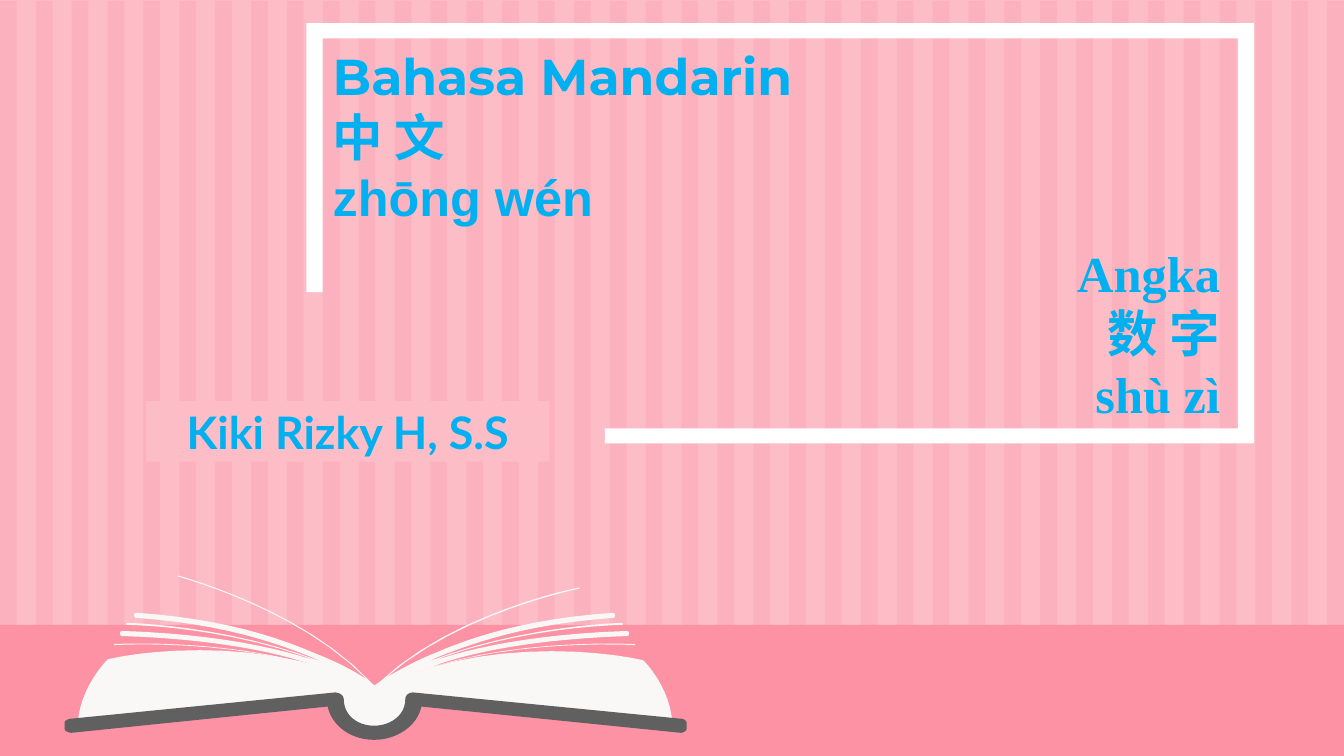
from lxml.etree import SubElement
from pptx import Presentation
from pptx.dml.color import RGBColor
from pptx.enum.shapes import MSO_SHAPE
from pptx.enum.text import MSO_ANCHOR, MSO_AUTO_SIZE, PP_ALIGN
from pptx.oxml.ns import qn
from pptx.util import Inches, Pt

BLUSH = RGBColor(0xFD, 0xBD, 0xC7)
ROSE = RGBColor(0xFC, 0x92, 0xA3)
SKY = RGBColor(0x00, 0xB0, 0xF0)
NAVY = RGBColor(0x00, 0x20, 0x60)
WHITE = RGBColor(0xFF, 0xFF, 0xFF)
BLACK = RGBColor(0x00, 0x00, 0x00)
PAPER = RGBColor(0xF9, 0xF8, 0xF7)
COVER = RGBColor(0x60, 0x60, 0x60)

# The slide is a grid of square cells, a hundredth of an inch each.
COLUMNS, ROWS = 1333, 750
CELL = Inches(0.01)
CURVE_STEPS = 12
HAN_FONT = "Noto Sans CJK SC"

# Outlines: a pair is a corner, six numbers are a Bezier curve.
FRAME = [(304, 23), (1244, 23), (1244, 440), (600, 440), (600, 425),
         (1228, 425), (1228, 38), (320, 38), (320, 290), (304, 290)]
PAGES = [
    (638, 655), (590, 644, 468, 634, 373, 684), (373, 683),
    (277, 633, 154, 643, 107, 654), (107, 654, 79, 681, 77, 719),
    (334, 691), (334, 709, 351, 724, 372, 724), (372, 725),
    (393, 725, 411, 710, 411, 692), (667, 720),
    (666, 682, 638, 655, 638, 655)]
BINDING = [
    (371, 734), (348, 734, 329, 720, 325, 701), (71, 727),
    (68, 727, 64, 725, 64, 723), (64, 717), (64, 715, 68, 713, 71, 713),
    (332, 687), (337, 687, 341, 690, 341, 694),
    (341, 709, 354, 720, 371, 720), (388, 720, 402, 709, 402, 694),
    (402, 690, 405, 687, 410, 687), (675, 713),
    (678, 713, 681, 715, 681, 717), (681, 723),
    (681, 725, 678, 727, 675, 727), (418, 701),
    (414, 720, 394, 734, 371, 734)]
FAN_LEAVES = [
    (630, 639), (628, 639, 522, 633, 430, 661),
    (430, 661, 431, 660, 432, 660), (468, 647, 531, 634, 622, 631),
    (623, 631, 624, 630, 624, 628), (624, 627, 623, 626, 621, 626),
    (530, 629, 466, 643, 429, 656), (425, 657, 422, 659, 418, 660),
    (513, 621, 616, 620, 617, 620), (618, 619),
    (617, 618), (616, 618, 517, 620, 423, 657),
    (427, 655, 430, 654, 434, 652), (471, 637, 524, 619, 608, 613),
    (609, 613, 610, 612, 610, 610), (610, 609, 609, 608, 607, 608),
    (522, 614, 468, 632, 431, 648)]
FAN_SPINE = [
    (370, 681), (371, 683), (369, 684), (373, 688),
    (373, 687, 387, 678, 416, 666), (511, 633, 628, 640, 629, 640),
    (630, 640)]
RIGHT_TOP_LEAF = [
    (409, 657, 394, 666, 383, 672), (458, 607, 574, 584, 575, 584),
    (575, 583), (574, 583), (573, 583, 451, 607, 377, 676)]
LEFT_TOP_LEAF = [
    (405, 658, 388, 668, 378, 675), (448, 603, 565, 573, 566, 572),
    (567, 572), (566, 571), (564, 572, 442, 604, 374, 678)]
MIRROR_SUM = 743


def flatten(outline):
    """Turn corners and curves into a plain list of points."""
    points = []
    for step in outline:
        if len(step) == 2:
            points.append(step)
            continue
        controls = [points[-1], step[:2], step[2:4], step[4:]]
        for count in range(1, CURVE_STEPS + 1):
            t = count / CURVE_STEPS
            weights = ((1 - t) ** 3, 3 * t * (1 - t) ** 2,
                       3 * t * t * (1 - t), t ** 3)
            points.append(tuple(
                sum(w * control[axis] for w, control in zip(weights, controls))
                for axis in (0, 1)))
    return points


class LessonCover:
    """Draws styled elements on one slide, placed in grid cells."""

    def __init__(self, slide):
        self.slide = slide
        slide.background.fill.solid()
        slide.background.fill.fore_color.rgb = BLUSH

    def paint(self, shape, color, alpha=None):
        shape.shadow.inherit = False
        shape.fill.solid()
        shape.fill.fore_color.rgb = color
        shape.line.fill.background()
        if alpha is not None:
            srgb = shape.element.spPr.find(".//" + qn("a:srgbClr"))
            SubElement(srgb, qn("a:alpha"), val=str(alpha * 1000))
        return shape

    def outline(self, contours, color, alpha=None, group=None):
        """Fill one or more closed contours as a single shape."""
        builder = None
        for contour in contours:
            start, *rest = [(x * CELL, y * CELL) for x, y in contour]
            if builder is None:
                builder = (group or self.slide).shapes.build_freeform(*start)
            else:
                builder.move_to(*start)
            builder.add_line_segments(rest, close=True)
        return self.paint(builder.convert_to_shape(), color, alpha)

    def rectangle(self, cells, color):
        box = self.slide.shapes.add_shape(
            MSO_SHAPE.RECTANGLE, *(n * CELL for n in cells))
        return self.paint(box, color)

    def title(self, cells, lines, edge):
        heading = self.slide.shapes.title
        heading.left, heading.top, heading.width, heading.height = (
            n * CELL for n in cells)
        heading.element.getparent().append(heading.element)
        self.letter(heading, lines, edge, PP_ALIGN.LEFT)

    def text(self, cells, lines, edge, align):
        box = self.slide.shapes.add_textbox(*(n * CELL for n in cells))
        self.letter(box, lines, edge, align)

    def letter(self, shape, lines, edge, align, size=36, grow=True):
        """Set (wording, font) lines; edge is the letters' line colour and width."""
        frame = shape.text_frame
        frame.text = "\n".join(wording for wording, _ in lines)
        frame.word_wrap = True
        frame.vertical_anchor = MSO_ANCHOR.MIDDLE
        frame.auto_size = (MSO_AUTO_SIZE.SHAPE_TO_FIT_TEXT if grow
                           else MSO_AUTO_SIZE.NONE)
        edge_color, edge_width = edge
        for paragraph, (_, font_name) in zip(frame.paragraphs, lines):
            paragraph.alignment = align
            run = paragraph.runs[0]
            run.font.size, run.font.bold = Pt(size), True
            run.font.color.rgb = SKY
            run.font.name = font_name
            properties = run._r.get_or_add_rPr()
            SubElement(properties, qn("a:ea"), typeface=HAN_FONT)
            letter_line = SubElement(properties, qn("a:ln"), w=str(int(Pt(edge_width))))
            line_fill = SubElement(letter_line, qn("a:solidFill"))
            SubElement(line_fill, qn("a:srgbClr"), val=str(edge_color))
            properties.insert(0, letter_line)

    def wallpaper(self, count=38, stripe=16.6):
        pitch = (COLUMNS - stripe) / (count - 1)
        lefts = [number * pitch for number in range(count)]
        self.outline([[(x, 1), (x + stripe, 1), (x + stripe, ROWS), (x, ROWS)]
                      for x in lefts], ROSE, alpha=24)

    def book(self):
        group = self.slide.shapes.add_group_shape()
        right_fan = flatten(FAN_LEAVES + RIGHT_TOP_LEAF + FAN_SPINE)
        left_fan = [(MIRROR_SUM - x, y) for x, y in
                    flatten(FAN_LEAVES + LEFT_TOP_LEAF + FAN_SPINE)]
        for points, color in ((flatten(PAGES), PAPER), (flatten(BINDING), COVER),
                              (right_fan, PAPER), (left_fan, PAPER)):
            self.outline([points], color, group=group)


def main():
    deck = Presentation()
    deck.slide_width, deck.slide_height = COLUMNS * CELL, ROWS * CELL
    cover = LessonCover(deck.slides.add_slide(deck.slide_layouts[5]))
    cover.wallpaper()
    cover.rectangle((0, 620, COLUMNS, 130), ROSE)
    cover.title((320, 39, 829, 192),
                [("Bahasa Mandarin", "Montserrat"), ("中 文", HAN_FONT),
                 ("zhōng wén", "Arial")], (WHITE, 1.4))
    cover.text((553, 234, 667, 192),
               [(wording, "Times New Roman")
                for wording in ("Angka", "数 字", "shù zì")],
               (NAVY, 0.75), PP_ALIGN.RIGHT)
    cover.outline([FRAME], WHITE)
    cover.book()
    author = cover.rectangle((145, 398, 400, 60), BLUSH)
    cover.letter(author, [("Kiki Rizky H, S.S", "Lato")], (BLACK, 1.4),
                 PP_ALIGN.CENTER, size=32, grow=False)
    deck.save("out.pptx")


if __name__ == "__main__":
    main()
